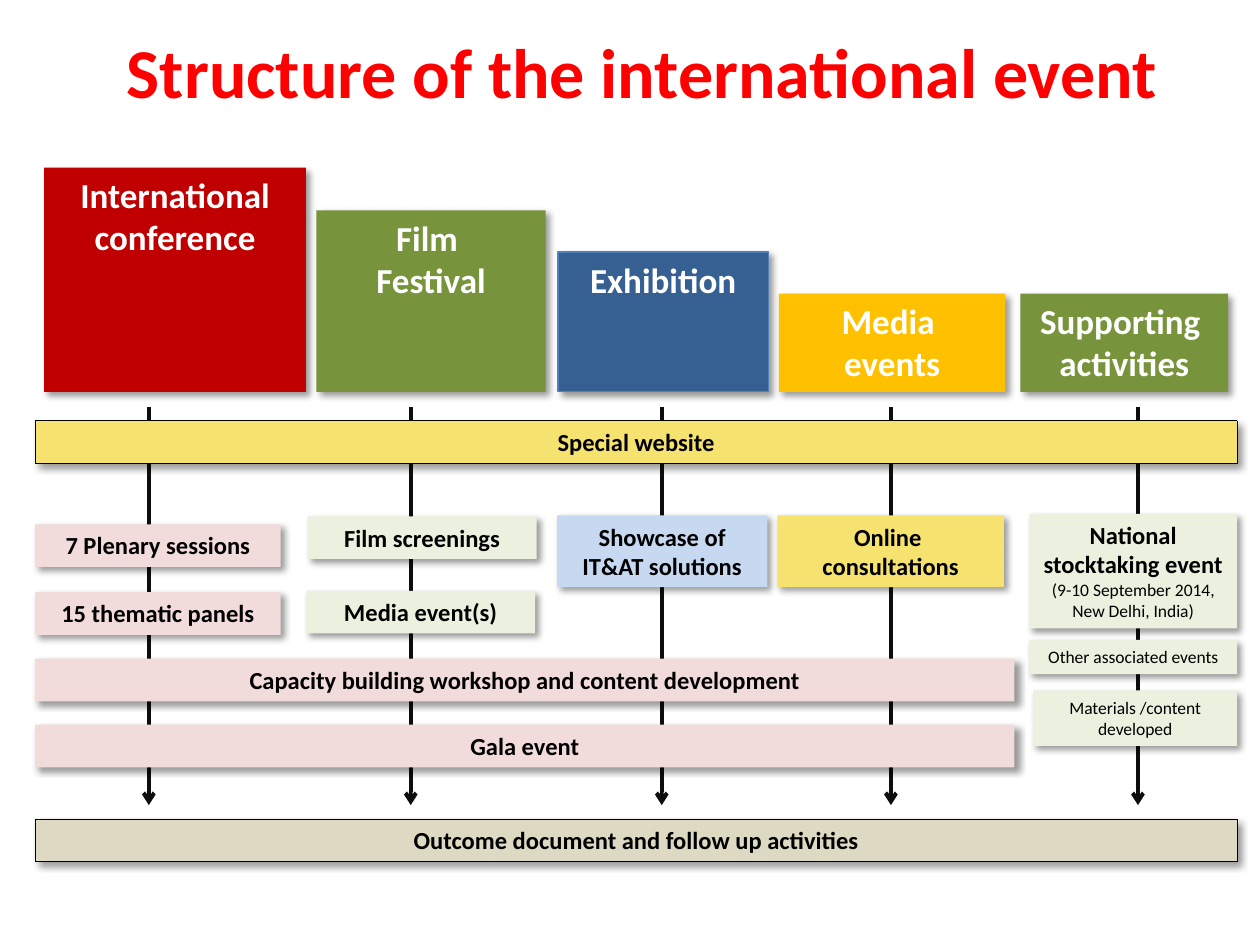
from lxml.etree import SubElement
from pptx import Presentation
from pptx.dml.color import RGBColor
from pptx.enum.dml import MSO_LINE
from pptx.enum.shapes import MSO_CONNECTOR, MSO_SHAPE
from pptx.enum.text import MSO_ANCHOR, PP_ALIGN
from pptx.oxml import parse_xml
from pptx.oxml.ns import nsdecls, qn
from pptx.util import Cm, Pt

HUES = {
    "white": "FFFFFF", "black": "000000", "ink": "0D0D0D", "title": "FF0000",
    "red": "C00000", "green": "77933C", "blue": "376092", "edge": "4F81BD",
    "gold": "FFC000", "yellow": "F5E26F", "sand": "DDD9C3",
    "pink": "F2DCDB", "mint": "EBF1DE", "sky": "C6D9F1",
}
HUES = {name: RGBColor.from_string(code) for name, code in HUES.items()}
SHADOW = (
    f'<a:effectLst {nsdecls("a")}><a:outerShdw blurRad="{Pt(4)}" dist="{Pt(3)}" '
    'dir="2700000" algn="tl" rotWithShape="0"><a:srgbClr val="000000">'
    '<a:alpha val="40000"/></a:srgbClr></a:outerShdw></a:effectLst>'
)


def write(para, text, size, bold, hue):
    run = para.add_run()
    run.text = text
    look = {"name": "Calibri", "size": Pt(size), "bold": bold}
    for key, value in look.items():
        setattr(run.font, key, value)
    run.font.color.rgb = HUES[hue]


def add_box(place, fill, paras, hue="black", edge=None):
    box = slide.shapes.add_shape(MSO_SHAPE.RECTANGLE, *map(Cm, place))
    box.fill.solid()
    box.fill.fore_color.rgb = HUES[fill]
    if edge:
        box.line.color.rgb = HUES[edge]
    else:
        box.line.fill.background()
    box.shadow.inherit = False
    props = box._element.spPr
    props.replace(props.find(qn("a:effectLst")), parse_xml(SHADOW))
    frame = box.text_frame
    look = {"word_wrap": True, "vertical_anchor": MSO_ANCHOR.TOP}
    for key, value in look.items():
        setattr(frame, key, value)
    for i, runs in enumerate(paras):
        para = frame.add_paragraph() if i else frame.paragraphs[0]
        para.alignment = PP_ALIGN.CENTER
        for j, (text, size, bold) in enumerate(runs):
            parts = text.split("\n")
            for k, part in enumerate(parts):
                if k:
                    para.add_line_break()
                write(para, part, size, bold, hue)
    return box


deck = Presentation()
deck.slide_width, deck.slide_height = Cm(25.4), Cm(19.05)
slide = deck.slides.add_slide(deck.slide_layouts[6])

for x in (3, 8.28, 13.34, 17.96, 22.94):
    arrow = slide.shapes.add_connector(
        MSO_CONNECTOR.STRAIGHT, Cm(x), Cm(8.21), Cm(x), Cm(16.23))
    arrow.line.color.rgb = HUES["ink"]
    arrow.line.width = Pt(2.25)
    SubElement(arrow.line._get_or_add_ln(), qn("a:tailEnd"), type="arrow")
    SubElement(arrow._element.spPr, qn("a:effectLst"))

base = 7.9
heads = [
    (0.89, 3.38, 5.28, "red", None, ["International conference"]),
    (6.38, 4.24, 4.62, "green", None, ["Film \nFestival"]),
    (11.25, 5.08, 4.24, "blue", "edge", ["Exhibition"]),
    (15.7, 5.92, 4.57, "gold", None, ["Media ", "events"]),
    (20.57, 5.92, 4.19, "green", None, ["Supporting \nactivities"]),
]
for x, y, wide, fill, edge, lines in heads:
    paras = [[(line, 20, True)] for line in lines]
    box = add_box((x, y, wide, base - y), fill, paras, "white", edge)
    if edge:
        box.line.width = Pt(0.75)

left, row = 0.71, 0.86
full, part = 24.23, 19.74
for y, fill, text in [
    (8.48, "yellow", "Special website"),
    (16.51, "sand", "Outcome document and follow up activities"),
]:
    bar = add_box((left, y, full, row), fill, [[(text, 14, True)]], edge="black")
    look = {"width": Pt(0.25), "dash_style": MSO_LINE.ROUND_DOT}
    for key, value in look.items():
        setattr(bar.line, key, value)

cards = [
    (left, 10.57, 4.95, row, "pink", ["7 Plenary sessions"]),
    (left, 11.94, 4.95, row, "pink", ["15 thematic panels"]),
    (6.2, 10.41, 4.62, row, "mint", ["Film screenings"]),
    (6.17, 11.91, 4.62, row, "mint", ["Media event(s)"]),
    (11.23, 10.39, 4.24, 1.45, "sky", ["Showcase of IT&AT solutions"]),
    (15.67, 10.39, 4.57, 1.45, "yellow", ["Online ", "consultations"]),
    (left, 13.28, part, row, "pink",
     ["Capacity building workshop and content development"]),
    (left, 14.61, part, row, "pink", ["Gala event"]),
]
for *place, fill, lines in cards:
    add_box(place, fill, [[(line, 14, True)] for line in lines])

notes = [
    (20.75, 10.36, 4.19, 2.31, [
        ("National stocktaking event ", 14, True),
        ("(9-10 September 2014, New Delhi, India)", 10, False)]),
    (20.75, 12.9, 4.19, 0.69, [("Other associated events", 10, False)]),
    (20.83, 13.92, 4.11, 1.12, [("Materials /content developed", 10, False)]),
]
for *place, runs in notes:
    add_box(place, "mint", [runs])

title = slide.shapes.add_textbox(Cm(2.31), Cm(0.46), Cm(21.51), Cm(1.96))
title.text_frame.word_wrap = False
write(title.text_frame.paragraphs[0], "Structure of the international event",
      40, True, "title")

deck.save("out.pptx")
